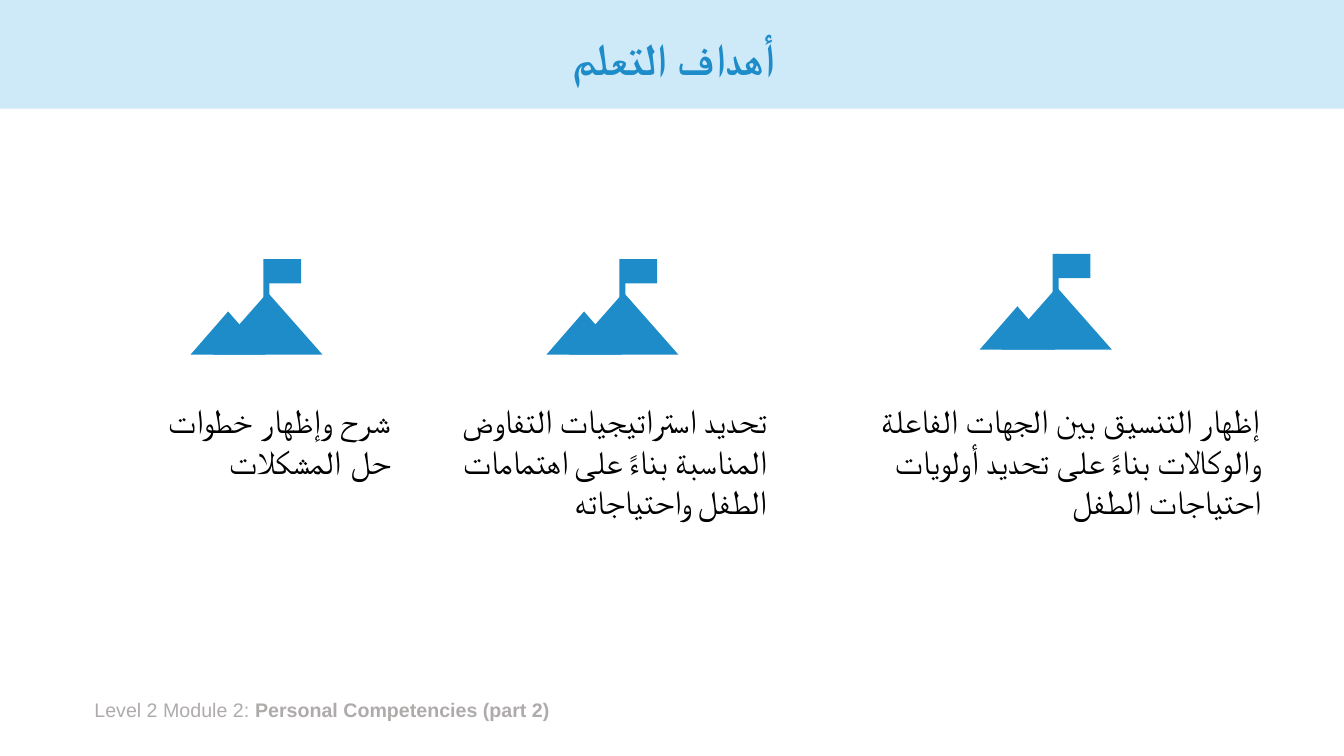
from lxml.etree import SubElement
from pptx import Presentation
from pptx.dml.color import RGBColor
from pptx.enum.shapes import MSO_SHAPE as Shape
from pptx.enum.text import MSO_ANCHOR as Anchor, MSO_AUTO_SIZE as AutoSize, PP_ALIGN as Align
from pptx.oxml.ns import qn
from pptx.util import Cm, Pt

BLUE = RGBColor(0x1D, 0x8C, 0xC8)
PALE_BLUE = RGBColor(0xCE, 0xE9, 0xF8)
GREY = RGBColor(0xAF, 0xAB, 0xAB)
BLACK = RGBColor(0, 0, 0)

# Content: text runs are (text, complex-script font); lengths in cm
TITLE = "أهداف التعلم"
FOOTER = [("Level 2 Module 2: ", False), ("Personal Competencies (part 2)", True)]
GOALS = [
    {"runs": [("شرح و", "Calibri"), ("إظهار خطوات حل المشكلات", "Arial")],
     "box": (2.95, 7.14, 2.31), "icon": (4.8, 6.53)},
    {"runs": [("تحديد استراتيجيات التفاوض المناسبة بناءً على اهتمامات الطفل واحتياجاته", "Calibri")],
     "box": (10.92, 8.66, 3.33), "icon": (13.77, 6.53)},
    {"runs": [("إظهار التنسيق بين الجهات الفاعلة والوكالات بناءً على تحديد أولويات احتياجات الطفل", "Calibri")],
     "box": (20.9, 11.1, 3.33), "icon": (24.69, 6.4)},
]
GOAL_TOP = 9.96

# Mountain icon: shape, then left, top, width, height from the icon's corner
ICON_PARTS = [
    (Shape.RECTANGLE, 1.84, 0, 0.15, 1.02),
    (Shape.RECTANGLE, 1.93, 0, 0.86, 0.61),
    (Shape.ISOSCELES_TRIANGLE, 0.56, 0.84, 2.77, 1.57),
    (Shape.ISOSCELES_TRIANGLE, 0, 1.32, 1.9, 1.09),
]


def add_filled(shapes, kind, left, top, width, height, color):
    part = shapes.add_shape(kind, Cm(left), Cm(top), Cm(width), Cm(height))
    part.shadow.inherit = False
    part.fill.solid()
    part.fill.fore_color.rgb = color
    part.line.fill.background()


def add_text(left, top, width, height, auto_size=AutoSize.SHAPE_TO_FIT_TEXT):
    frame = slide.shapes.add_textbox(Cm(left), Cm(top), Cm(width), Cm(height)).text_frame
    frame.word_wrap = True
    frame.auto_size = auto_size
    return frame


def add_run(paragraph, text, size, color, font, bold=False, script_font=None):
    run = paragraph.add_run()
    run.text = text
    run.font.size = Pt(size)
    run.font.bold = bold
    run.font.name = font
    run.font.color.rgb = color
    if script_font:
        SubElement(run.font._element, qn("a:cs"), typeface=script_font)


def set_rtl(paragraph, align):
    paragraph.alignment = align
    paragraph._p.get_or_add_pPr().set("rtl", "1")


deck = Presentation()
deck.slide_width, deck.slide_height = Cm(33.87), Cm(19.05)
slide = deck.slides.add_slide(deck.slide_layouts[6])

# Title band
add_filled(slide.shapes, Shape.RECTANGLE, 0, 0, 33.87, 2.74, PALE_BLUE)
title = add_text(2.34, 0.33, 29.21, 2.41, AutoSize.NONE)
title.vertical_anchor = Anchor.MIDDLE
heading = title.paragraphs[0]
set_rtl(heading, Align.CENTER)
heading.line_spacing = 0.9
add_run(heading, TITLE, 32, BLUE, "Calibri", True, "Calibri")

# Footer
footer = add_text(2.13, 17.45, 21.74, 0.86).paragraphs[0]
for text, bold in FOOTER:
    add_run(footer, text, 14, GREY, "Arial", bold)

# Goals with their icons
for goal in GOALS:
    left, width, height = goal["box"]
    statement = add_text(left, GOAL_TOP, width, height).paragraphs[0]
    set_rtl(statement, Align.RIGHT)
    for text, script_font in goal["runs"]:
        add_run(statement, text, 24, BLACK, "Calibri", script_font=script_font)

    icon_left, icon_top = goal["icon"]
    icon = slide.shapes.add_group_shape()
    for kind, dx, dy, part_width, part_height in ICON_PARTS:
        add_filled(icon.shapes, kind, icon_left + dx, icon_top + dy,
                   part_width, part_height, BLUE)

deck.save("out.pptx")
